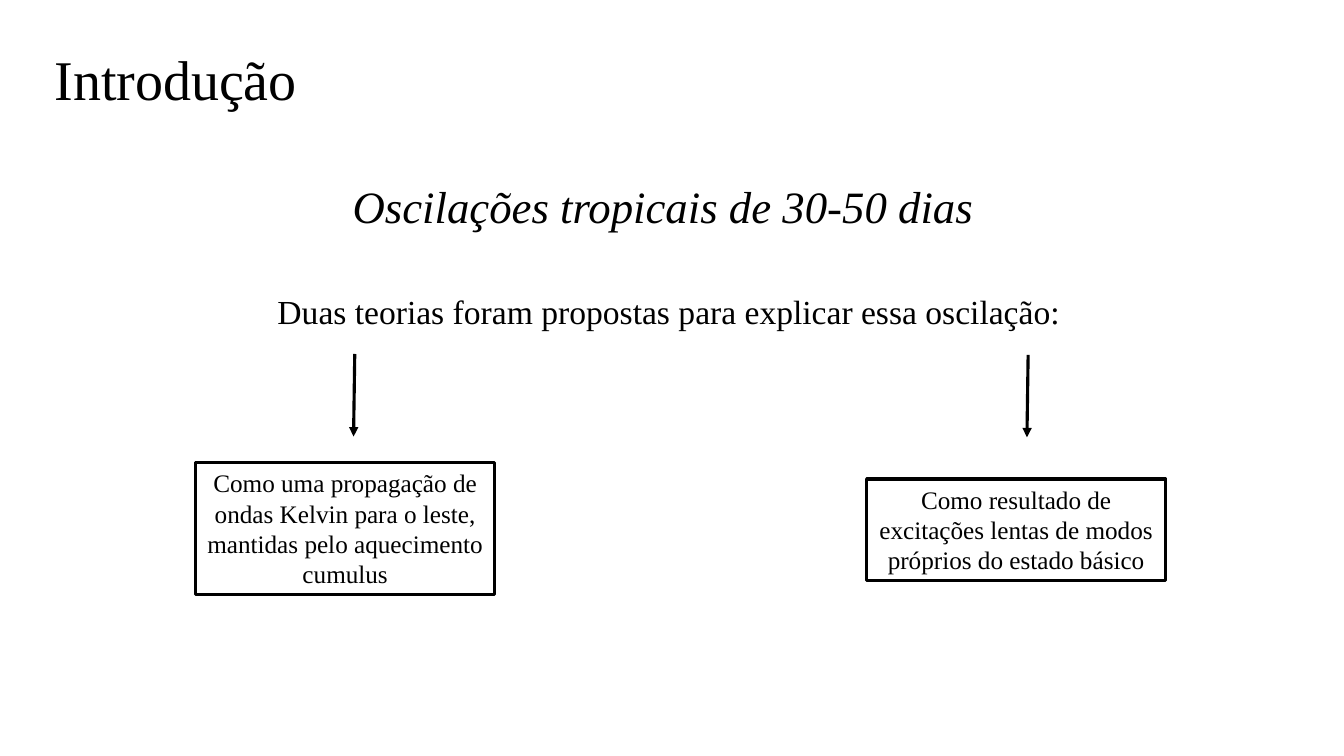
from pptx import Presentation
from pptx.dml.color import RGBColor
from pptx.enum.shapes import MSO_CONNECTOR, MSO_SHAPE
from pptx.enum.text import MSO_ANCHOR, MSO_AUTO_SIZE, PP_ALIGN
from pptx.oxml.ns import qn
from pptx.util import Cm, Pt
from lxml.etree import SubElement


def rgb(value):
    return RGBColor.from_string(value)


def write(p, text, size=18, align=PP_ALIGN.CENTER, italic=False, spacing=1.0, before=0):
    p.alignment = align
    p.line_spacing = spacing
    p.space_before = Pt(before)
    r = p.add_run()
    r.text = text
    r.font.name = "Times New Roman"
    r.font.size = Pt(size)
    r.font.italic = italic
    r.font.color.rgb = rgb("000000")


prs = Presentation()
prs.slide_width, prs.slide_height = Cm(33.87), Cm(19.05)
s = prs.slides.add_slide(prs.slide_layouts[5])

# Title
title = s.shapes.title
title.left, title.top, title.width, title.height = Cm(1.12), Cm(0.91), Cm(32.36), Cm(2.31)
tf = title.text_frame
tf.vertical_anchor = MSO_ANCHOR.MIDDLE
write(tf.paragraphs[0], "Introdução", size=40, align=PP_ALIGN.LEFT, spacing=0.9)

# Topic and lead-in sentence
body = s.shapes.add_textbox(Cm(0.46), Cm(4.52), Cm(32.79), Cm(13.67))
tf = body.text_frame
tf.word_wrap = True
write(tf.paragraphs[0], "Oscilações tropicais de 30-50 dias ", size=32, italic=True,
      spacing=0.9, before=10)
write(tf.add_paragraph(), "Duas teorias foram propostas para explicar essa oscilação:",
      size=24, spacing=0.9, before=45)

# The two theories: box left, box top, box height, arrow x, arrow top, text
theories = [
    (4.93, 11.66, 3.33, 8.94, 8.92,
     "Como uma propagação de ondas Kelvin para o leste, mantidas pelo aquecimento cumulus"),
    (21.84, 12.07, 2.57, 25.91, 8.94,
     "Como resultado de excitações lentas de modos próprios do estado básico"),
]
for left, top, height, arrow_x, arrow_top, text in theories:
    # Framed box
    sp = s.shapes.add_shape(MSO_SHAPE.RECTANGLE, Cm(left), Cm(top), Cm(7.54), Cm(height))
    sp.shadow.inherit = False
    sp.fill.background()
    sp.line.color.rgb = rgb("000000")
    sp.line.width = Pt(2.25)
    tf = sp.text_frame
    tf.word_wrap = True
    tf.auto_size = MSO_AUTO_SIZE.SHAPE_TO_FIT_TEXT
    tf.vertical_anchor = MSO_ANCHOR.TOP
    write(tf.paragraphs[0], text)

    # Arrow down to the box
    arrow = s.shapes.add_connector(MSO_CONNECTOR.STRAIGHT, Cm(arrow_x), Cm(arrow_top),
                                   Cm(arrow_x - 0.03), Cm(arrow_top + 2.08))
    arrow.line.color.rgb = rgb("000000")
    arrow.line.width = Pt(2.25)
    SubElement(arrow.line._get_or_add_ln(), qn("a:tailEnd"), type="triangle")
    SubElement(arrow._element.spPr, qn("a:effectLst"))

prs.save("out.pptx")
